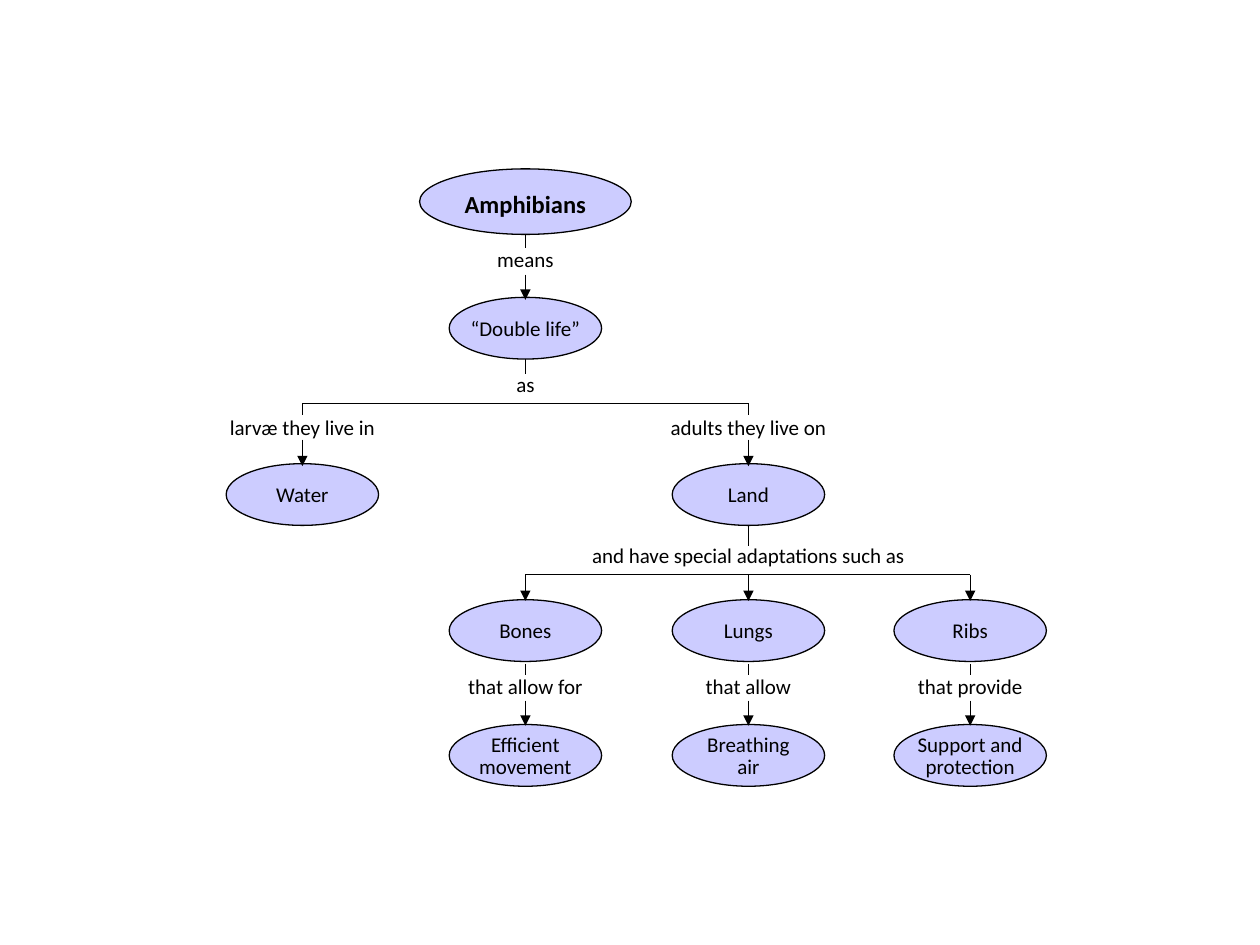
from lxml import etree
from pptx import Presentation
from pptx.dml.color import RGBColor
from pptx.enum.shapes import MSO_CONNECTOR, MSO_SHAPE
from pptx.enum.text import MSO_ANCHOR, MSO_AUTO_SIZE, PP_ALIGN
from pptx.oxml.ns import qn
from pptx.util import Inches, Pt

OVAL = MSO_SHAPE.OVAL
STRAIGHT = MSO_CONNECTOR.STRAIGHT
MIDDLE = MSO_ANCHOR.MIDDLE
CENTER = PP_ALIGN.CENTER
FIT_SHAPE = MSO_AUTO_SIZE.SHAPE_TO_FIT_TEXT

COLORS = {"fill": "CCCCFF", "ink": "000000"}
FONT = "Calibri"

# Column centres
WATER_X, BONES_X, LUNGS_X, RIBS_X = 2.4, 4.17, 5.94, 7.7
LAND_X = LUNGS_X


def write_text(box, text, size, spacing, bold=False):
    frame = box.text_frame
    frame.word_wrap = False
    para = frame.paragraphs[0]
    para.alignment = CENTER
    para.line_spacing = spacing
    for number, words in enumerate(text.split("\n")):
        if number:
            para.add_line_break()
        span = para.add_run()
        span.text = words
        span.font.name = FONT
        span.font.size = Pt(size)
        span.font.bold = bold
        span.font.color.rgb = RGBColor.from_string(COLORS["ink"])


def add_line(x1, y1, x2, y2, arrow=False):
    line = page.shapes.add_connector(
        STRAIGHT, Inches(x1), Inches(y1), Inches(x2), Inches(y2))
    line.line.width = Pt(0.75)
    line.line.color.rgb = RGBColor.from_string(COLORS["ink"])
    if arrow:
        etree.SubElement(line.line._get_or_add_ln(), qn("a:tailEnd"), type="triangle")
    etree.SubElement(line._element.spPr, qn("a:effectLst"))


deck = Presentation()
deck.slide_width, deck.slide_height = Inches(10), Inches(7.5)
page = deck.slides.add_slide(deck.slide_layouts[6])

# Concepts: text, centre x, top, width, height, size, line spacing, bold
TITLE_STYLE = (1.68, 0.52, 14, 1.0, True)
CONCEPT_STYLE = (1.21, 0.49, 12, 0.85, False)
concepts = [
    ("Amphibians", BONES_X, 1.34, TITLE_STYLE),
    ("“Double life”", BONES_X, 2.36, CONCEPT_STYLE),
    ("Water", WATER_X, 3.68, CONCEPT_STYLE),
    ("Land", LAND_X, 3.68, CONCEPT_STYLE),
    ("Bones", BONES_X, 4.76, CONCEPT_STYLE),
    ("Lungs", LUNGS_X, 4.76, CONCEPT_STYLE),
    ("Ribs", RIBS_X, 4.76, CONCEPT_STYLE),
    ("Efficient\nmovement", BONES_X, 5.75, CONCEPT_STYLE),
    ("Breathing\nair", LUNGS_X, 5.75, CONCEPT_STYLE),
    ("Support and\nprotection", RIBS_X, 5.75, CONCEPT_STYLE),
]
for text, x, top, (width, height, size, spacing, bold) in concepts:
    oval = page.shapes.add_shape(
        OVAL, Inches(x - width / 2), Inches(top), Inches(width), Inches(height))
    oval.shadow.inherit = False
    oval.fill.solid()
    oval.fill.fore_color.rgb = RGBColor.from_string(COLORS["fill"])
    oval.line.color.rgb = RGBColor.from_string(COLORS["ink"])
    oval.line.width = Pt(0.75)
    frame = oval.text_frame
    frame.vertical_anchor = MIDDLE
    frame.margin_left = frame.margin_right = frame.margin_bottom = 0
    frame.margin_top = Inches(0.03)
    write_text(oval, text, size, spacing, bold)

# Linking phrases: text, centre x, top, width
phrases = [
    ("means", BONES_X, 1.93, 0.7),
    ("as", BONES_X, 2.92, 0.38),
    ("larvæ they live in", WATER_X, 3.26, 1.45),
    ("adults they live on", LAND_X, 3.26, 1.53),
    ("and have special adaptations such as", LAND_X, 4.28, 2.97),
    ("that allow for", BONES_X, 5.32, 1.14),
    ("that allow", LUNGS_X, 5.32, 0.9),
    ("that provide", RIBS_X, 5.32, 1.07),
]
for text, x, top, width in phrases:
    label = page.shapes.add_textbox(
        Inches(x - width / 2), Inches(top), Inches(width), Inches(0.28))
    write_text(label, text, 12, 0.9)
    label.text_frame.auto_size = FIT_SHAPE

# Branch bars
add_line(WATER_X, 3.2, LAND_X, 3.2)
add_line(BONES_X, 4.56, RIBS_X, 4.56)

# Vertical links: columns, top, bottom, arrow
links = [
    ([BONES_X], 1.86, 1.97, False),
    ([BONES_X], 2.18, 2.38, True),
    ([BONES_X], 2.85, 2.97, False),
    ([WATER_X, LAND_X], 3.2, 3.29, False),
    ([WATER_X, LAND_X], 3.49, 3.7, True),
    ([LAND_X], 4.17, 4.33, False),
    ([BONES_X, LUNGS_X, RIBS_X], 4.56, 4.77, True),
    ([BONES_X, LUNGS_X, RIBS_X], 5.27, 5.36, False),
    ([BONES_X, LUNGS_X, RIBS_X], 5.56, 5.76, True),
]
for columns, top, bottom, arrow in links:
    for x in columns:
        add_line(x, top, x, bottom, arrow)

deck.save("out.pptx")
